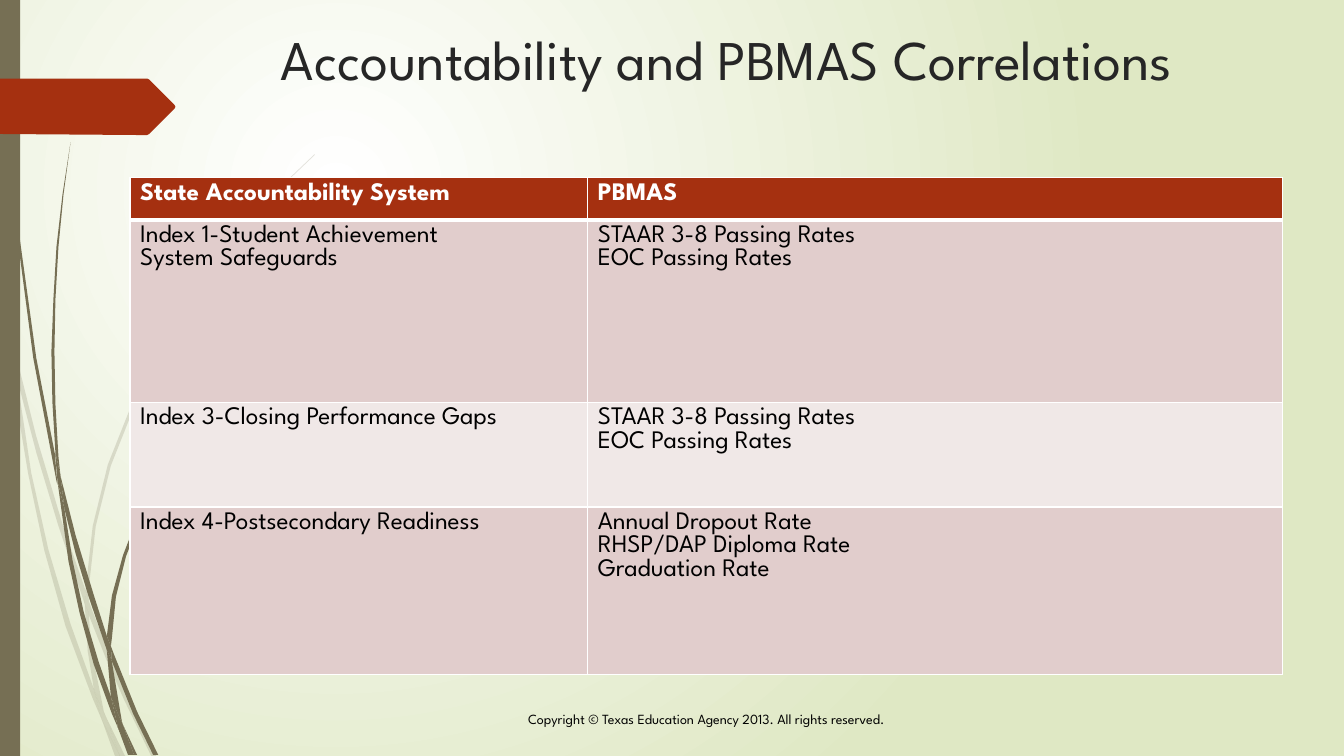
from lxml import etree
from pptx import Presentation
from pptx.dml.color import RGBColor
from pptx.enum.shapes import MSO_SHAPE
from pptx.enum.text import PP_ALIGN
from pptx.oxml.ns import qn
from pptx.util import Inches, Pt

RECT = MSO_SHAPE.RECTANGLE
LEFT, CENTER = PP_ALIGN.LEFT, PP_ALIGN.CENTER
FONT = "League Spartan"
WHITE, BLACK, RED, OLIVE = "FFFFFF", "000000", "A53010", "766F54"
BANDS = ["E1CDCC", "F0E8E7"]

# Outlines of the grass blades, as (x, y) corners in inches
FAINT_BLADES = [
    [(0.11, 3.5), (0.09, 3.22), (0, 2.82), (0, 2.99), (0.1, 3.44)],
    [(0.58, 5.22), (0.84, 5.99), (0.85, 5.86), (0.62, 5.2), (0.36, 4.33),
     (0.14, 3.45), (0.17, 3.76), (0.36, 4.49)],
    [(0.92, 6.07), (0.88, 5.96), (0.88, 6.1), (1.05, 6.53), (1.23, 6.94),
     (1.5, 7.5), (1.55, 7.5), (1.27, 6.92), (1.09, 6.5)],
    [(1.19, 7.5), (1.24, 7.5), (1.05, 7.11)],
    [(0.93, 6.83), (0.7, 6.19), (0.48, 5.45), (0.31, 4.69), (0.17, 3.76),
     (0.11, 3.5), (0.18, 4.1), (0.28, 4.7), (0.44, 5.46), (0.65, 6.21),
     (0.92, 6.93), (1.01, 7.14), (0.99, 7.07)],
    [(0.84, 5.99), (0.87, 6.46), (0.93, 6.83), (0.96, 6.92), (1.05, 7.11),
     (1.03, 7.06), (0.91, 6.46), (0.88, 6.1), (0.88, 6.08)],
    [(0.88, 5.84), (0.95, 5.22), (1.1, 4.62), (1.33, 4.04), (1.6, 3.49),
     (1.93, 2.95), (2.29, 2.45), (2.68, 1.98), (2.9, 1.75), (3.12, 1.54),
     (3.12, 1.53), (2.89, 1.75), (2.68, 1.97), (2.28, 2.44), (1.91, 2.94),
     (1.58, 3.48), (1.3, 4.03), (1.07, 4.61), (0.92, 5.22), (0.85, 5.84),
     (0.85, 5.86), (0.88, 5.96)],
    [(1.01, 7.14), (1.14, 7.5), (1.19, 7.5)],
    [(0.88, 6.08), (0.88, 6.1), (0.88, 5.96), (0.85, 5.86), (0.84, 5.99)],
    [(0.96, 6.92), (0.93, 6.83), (0.99, 7.07), (1.01, 7.14), (1.19, 7.5),
     (1.05, 7.11)],
]
DARK_BLADES = [
    [(0.07, 1.1), (0.17, 2.33), (0.33, 3.55), (0.56, 4.77), (0.57, 4.81),
     (0.55, 4.57), (0.55, 4.53), (0.36, 3.55), (0.19, 2.32), (0.08, 1.09),
     (0.05, 0.48), (0.04, 0), (0.03, 0), (0.04, 0.48)],
    [(0.88, 5.92), (1.06, 6.45), (1.06, 6.31), (0.93, 5.9), (0.75, 5.31),
     (0.6, 4.72), (0.64, 5.05), (0.75, 5.49)],
    [(1.13, 6.49), (1.1, 6.41), (1.11, 6.56), (1.32, 7.08), (1.52, 7.49),
     (1.57, 7.49), (1.36, 7.06)],
    [(1.1, 6.91), (0.98, 6.57), (0.83, 6.07), (0.72, 5.56), (0.64, 5.05),
     (0.57, 4.77), (0.68, 5.57), (0.79, 6.08), (0.93, 6.59), (1.11, 7.08),
     (1.17, 7.22), (1.16, 7.17)],
    [(0.6, 4.72), (0.58, 4.53), (0.55, 4.01), (0.54, 3.49), (0.55, 2.97),
     (0.58, 2.45), (0.63, 1.93), (0.7, 1.41), (0.62, 1.93), (0.56, 2.45),
     (0.53, 2.97), (0.51, 3.49), (0.52, 3.99), (0.55, 4.49)],
    [(1.33, 7.49), (1.36, 7.49), (1.22, 7.19)],
    [(0.57, 4.77), (0.64, 5.05), (0.6, 4.72), (0.55, 4.49), (0.55, 4.53)],
    [(1.11, 6.33), (1.15, 5.92), (1.25, 5.52), (1.4, 5.13), (1.58, 4.76),
     (1.8, 4.4), (2.05, 4.06), (2.31, 3.74), (2.45, 3.59), (2.61, 3.44),
     (2.6, 3.44), (2.45, 3.58), (2.31, 3.73), (2.04, 4.05), (1.79, 4.39),
     (1.56, 4.74), (1.37, 5.12), (1.22, 5.51), (1.11, 5.91), (1.06, 6.31),
     (1.1, 6.41)],
    [(1.17, 7.22), (1.27, 7.49), (1.31, 7.49)],
    [(1.06, 6.45), (1.1, 6.91), (1.16, 7.06), (1.22, 7.19), (1.21, 7.16),
     (1.11, 6.56), (1.09, 6.51)],
    [(1.06, 6.45), (1.09, 6.51), (1.11, 6.56), (1.1, 6.41), (1.06, 6.31)],
    [(1.16, 7.06), (1.1, 6.91), (1.16, 7.17), (1.17, 7.22), (1.3, 7.49),
     (1.33, 7.49), (1.22, 7.19)],
]
ARROW_TAG = [(1.73, 1.08), (1.48, 1.33), (1.46, 1.34), (1.36, 1.34), (0, 1.33),
             (0, 0.78), (1.46, 0.78), (1.48, 0.79), (1.73, 1.04), (1.74, 1.06)]

ROWS = [
    (["State Accountability System"], ["PBMAS"]),
    (["Index 1-Student Achievement", "System Safeguards"],
     ["STAAR 3-8 Passing Rates", "EOC Passing Rates"]),
    (["Index 3-Closing Performance Gaps"],
     ["STAAR 3-8 Passing Rates", "EOC Passing Rates"]),
    (["Index 4-Postsecondary Readiness"],
     ["Annual Dropout Rate", "RHSP/DAP Diploma Rate", "Graduation Rate"]),
]
COL_SHARES = [4.54, 6.89]
ROW_HEIGHTS = [0.42, 1.81, 1.04, 1.66]


def rgb(value):
    return RGBColor.from_string(value)


def write(tf, lines, size=18, color=BLACK, bold=False, align=LEFT):
    for i, line in enumerate(lines):
        p = tf.paragraphs[0] if i == 0 else tf.add_paragraph()
        p.alignment = align
        r = p.add_run()
        r.text = line
        r.font.name, r.font.size, r.font.bold = FONT, Pt(size), bold
        r.font.color.rgb = rgb(color)


def paint(sp, color, alpha=100):
    sp.shadow.inherit = False
    sp.fill.solid()
    sp.fill.fore_color.rgb = rgb(color)
    sp.line.fill.background()
    if alpha < 100:
        clr = sp._element.spPr.find(qn("a:solidFill"))[0]
        etree.SubElement(clr, qn("a:alpha")).set("val", str(alpha * 1000))


def add_outline(s, corners, color, alpha=100):
    points = [(Inches(x), Inches(y)) for x, y in corners]
    builder = s.shapes.build_freeform(*points[0])
    builder.add_line_segments(points[1:], close=True)
    paint(builder.convert_to_shape(), color, alpha)


def add_background(s):
    fill = s.background.fill
    fill.gradient()
    for stop, color in zip(fill.gradient_stops, [WHITE, "DFE8C4"]):
        stop.color.rgb = rgb(color)
    grad = next(s._element.iter(qn("a:gradFill")))
    grad.remove(grad.find(qn("a:lin")))
    radial = etree.SubElement(grad, qn("a:path"), path="circle")
    etree.SubElement(radial, qn("a:fillToRect"),
                     l="50000", t="50000", r="100000", b="100000")


def add_decoration(s, height):
    for blades, alpha in ((FAINT_BLADES, 20), (DARK_BLADES, 100)):
        for corners in blades:
            add_outline(s, corners, OLIVE, alpha)
    # Side bar and arrow tag
    bar = s.shapes.add_shape(RECT, 0, 0, Inches(0.2), Inches(height))
    paint(bar, OLIVE)
    add_outline(s, ARROW_TAG, RED)


def add_label(s, box, text, inset, **fmt):
    tf = s.shapes.add_textbox(*map(Inches, box)).text_frame
    tf.word_wrap = True
    tf.margin_top = Inches(inset)
    write(tf, [text], align=CENTER, **fmt)


def set_border(cell, side, width):
    ln = etree.SubElement(cell._tc.get_or_add_tcPr(), qn("a:ln" + side),
                          w=str(Pt(width)))
    fill = etree.SubElement(ln, qn("a:solidFill"))
    etree.SubElement(fill, qn("a:srgbClr"), val=WHITE)


def add_correlations(s, box):
    frame = s.shapes.add_table(len(ROWS), len(COL_SHARES), *map(Inches, box))
    table = frame.table
    for column, share in zip(table.columns, COL_SHARES):
        column.width = Inches(box[2] * share / sum(COL_SHARES))
    for i, (row, height) in enumerate(zip(ROWS, ROW_HEIGHTS)):
        table.rows[i].height = Inches(height)
        header = i == 0
        for j, lines in enumerate(row):
            cell = table.cell(i, j)
            for side in "LRTB":
                heavy = (i, side) in ((0, "B"), (1, "T"))
                set_border(cell, side, 3 if heavy else 1)
            cell.fill.solid()
            cell.fill.fore_color.rgb = rgb(RED if header else BANDS[(i - 1) % 2])
            write(cell.text_frame, lines, bold=header,
                  color=WHITE if header else BLACK)


def main():
    prs = Presentation()
    prs.slide_width, prs.slide_height = Inches(13.33), Inches(7.5)
    s = prs.slides.add_slide(prs.slide_layouts[6])
    add_background(s)
    add_decoration(s, 7.5)
    add_label(s, (1.65, 0.21, 11.11, 1.43), "Accountability and PBMAS Correlations",
              0.03, size=40, color="262626")
    add_label(s, (3.67, 7, 6.67, 0.25),
              "Copyright © Texas Education Agency 2013. All rights reserved.",
              0.05, size=10)
    add_correlations(s, (1.29, 1.76, 11.43, sum(ROW_HEIGHTS)))
    prs.save("out.pptx")


if __name__ == "__main__":
    main()
